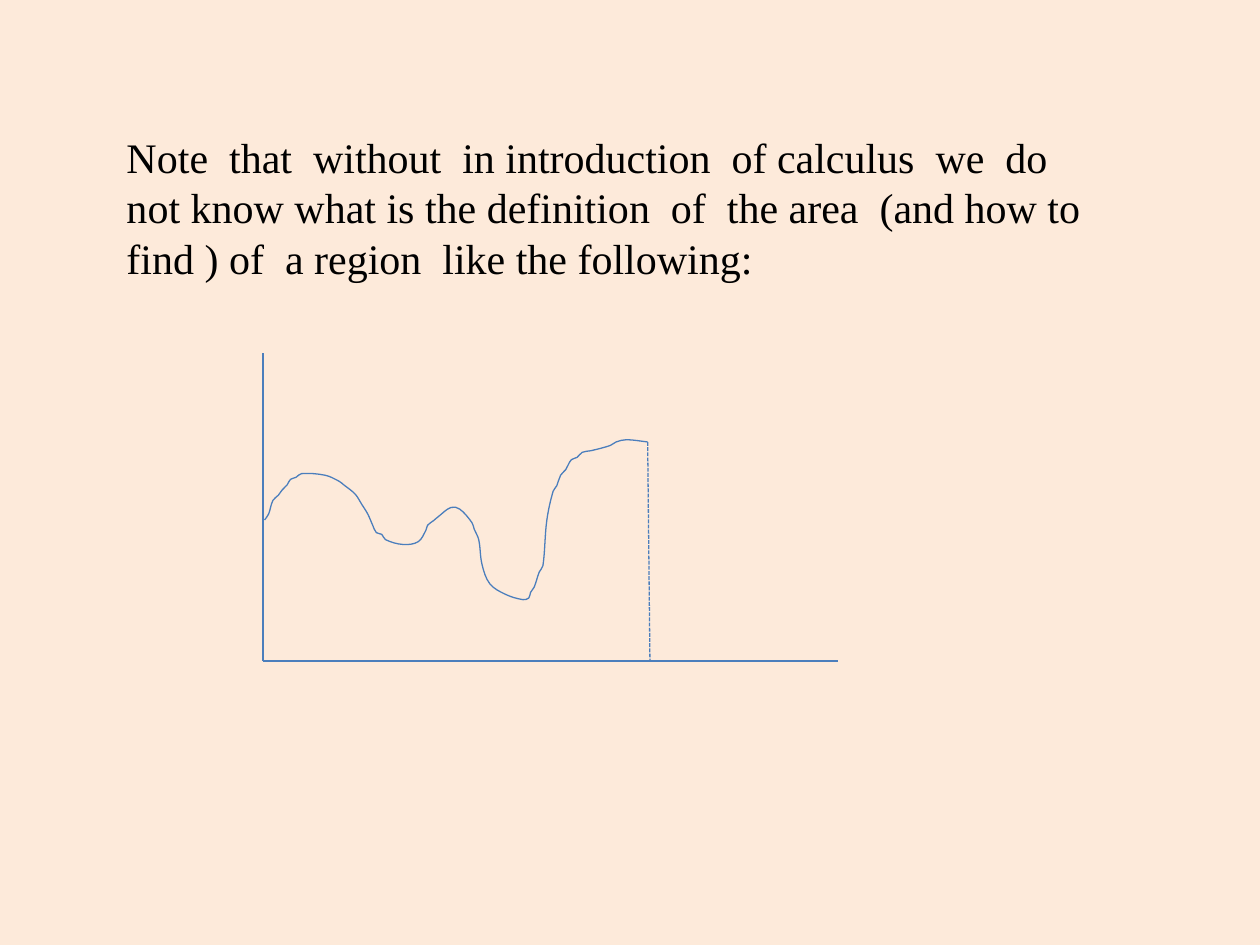
from dataclasses import dataclass
from math import dist

from lxml.etree import SubElement
from pptx import Presentation
from pptx.dml.color import RGBColor
from pptx.enum.dml import MSO_LINE_DASH_STYLE as Dash
from pptx.enum.shapes import MSO_CONNECTOR as Connector
from pptx.enum.text import MSO_AUTO_SIZE as AutoSize
from pptx.oxml.ns import qn
from pptx.util import Pt

# Content; all positions are in points
NOTE = ("Note  that  without  in introduction  of calculus  we  do not know what is "
        "the definition  of  the area  (and how to find ) of  a region  like the following:")
NOTE_BOX = (65.2, 71.6, 572.4, 94.3)

ORIGIN = (150.25, 377.75)
X_AXIS_END = (478.8, 377.75)
Y_AXIS_END = (150.25, 202)
BOUNDARY_FOOT = (371.4, 377.75)

CURVE_KNOTS = [
    (151.2, 297.2), (153.5, 293.8), (156, 286), (159.1, 283), (161.3, 280),
    (164.2, 277), (166, 274), (169.2, 272.8), (172.3, 270.7), (185.8, 271.6),
    (193.7, 275), (196.6, 277.2), (203, 282.4), (206.6, 288), (210.2, 293.8),
    (213, 300.2), (215.1, 304.4), (218.2, 305.4), (220.3, 308.4), (230.4, 311.2),
    (239, 309.6), (243.4, 303.1), (244.4, 300.2), (247.7, 297.6), (250.6, 295.2),
    (257.8, 290), (262.8, 291), (269.8, 298.8), (271, 302.4), (273.6, 308.4),
    (275.5, 322.6), (279.9, 333.6), (288.7, 339.6), (298.8, 342.7), (302.2, 341.8),
    (303.2, 338.6), (305.3, 335.5), (308.2, 326.9), (310.3, 323.3), (312.5, 297.4),
    (316.1, 280.8), (318.2, 277.6), (320.4, 271.6), (323.3, 268.4), (326.5, 262.8),
    (329.8, 261.4), (332.8, 258.5), (337.7, 257.6), (348.8, 254.6), (352.1, 252.6),
    (358, 251.3), (370.1, 252.6),
]


@dataclass(frozen=True)
class Theme:
    background = RGBColor.from_string("FDEADA")
    ink = RGBColor.from_string("000000")
    stroke = RGBColor.from_string("4B7EBC")
    font = "Times New Roman"
    note_size = Pt(24)
    stroke_width = Pt(0.75)


def style_stroke(line):
    line.color.rgb = Theme.stroke
    line.width = Theme.stroke_width


def draw_line(slide, start, end, dash=None):
    segment = slide.shapes.add_connector(
        Connector.STRAIGHT, *(Pt(v) for v in (*start, *end)))
    style_stroke(segment.line)
    if dash:
        segment.line.dash_style = dash
    SubElement(segment._element.spPr, qn("a:effectLst"))


def bend_segments(outline):
    """Turn the straight segments of an outline into smooth Bezier curves."""
    knots = [(int(pt.get("x")), int(pt.get("y"))) for pt in outline.iter(qn("a:pt"))]
    padded = [knots[0], *knots, knots[-1]]

    def handle(index, length):
        before, after = padded[index], padded[index + 2]
        reach = length / 3 / dist(before, after)
        return tuple(round(k + (b - a) * reach)
                     for k, a, b in zip(knots[index], before, after))

    for i, segment in enumerate(outline.findall(qn("a:lnTo"))):
        chord = dist(knots[i], knots[i + 1])
        segment.clear()
        segment.tag = qn("a:cubicBezTo")
        for x, y in (handle(i, chord), handle(i + 1, -chord), knots[i + 1]):
            SubElement(segment, qn("a:pt"), x=str(x), y=str(y))


def draw_curve(slide, knots):
    start, *rest = [(Pt(x), Pt(y)) for x, y in knots]
    builder = slide.shapes.build_freeform(*start)
    builder.add_line_segments(rest, close=False)
    curve = builder.convert_to_shape()
    curve.shadow.inherit = False
    curve.fill.background()
    style_stroke(curve.line)
    bend_segments(next(curve._element.iter(qn("a:path"))))


def add_note(slide):
    frame = slide.shapes.add_textbox(*(Pt(v) for v in NOTE_BOX)).text_frame
    frame.word_wrap = True
    frame.auto_size = AutoSize.SHAPE_TO_FIT_TEXT
    run = frame.paragraphs[0].add_run()
    run.text = NOTE
    run.font.name = Theme.font
    run.font.size = Theme.note_size
    run.font.color.rgb = Theme.ink


def main():
    deck = Presentation()
    deck.slide_width, deck.slide_height = Pt(720), Pt(540)
    slide = deck.slides.add_slide(deck.slide_layouts[6])
    slide.background.fill.solid()
    slide.background.fill.fore_color.rgb = Theme.background

    add_note(slide)

    # Region under the curve: axes, curve, right boundary
    for axis_end in (X_AXIS_END, Y_AXIS_END):
        draw_line(slide, ORIGIN, axis_end)
    draw_curve(slide, CURVE_KNOTS)
    draw_line(slide, CURVE_KNOTS[-1], BOUNDARY_FOOT, Dash.SQUARE_DOT)

    deck.save("out.pptx")


if __name__ == "__main__":
    main()
